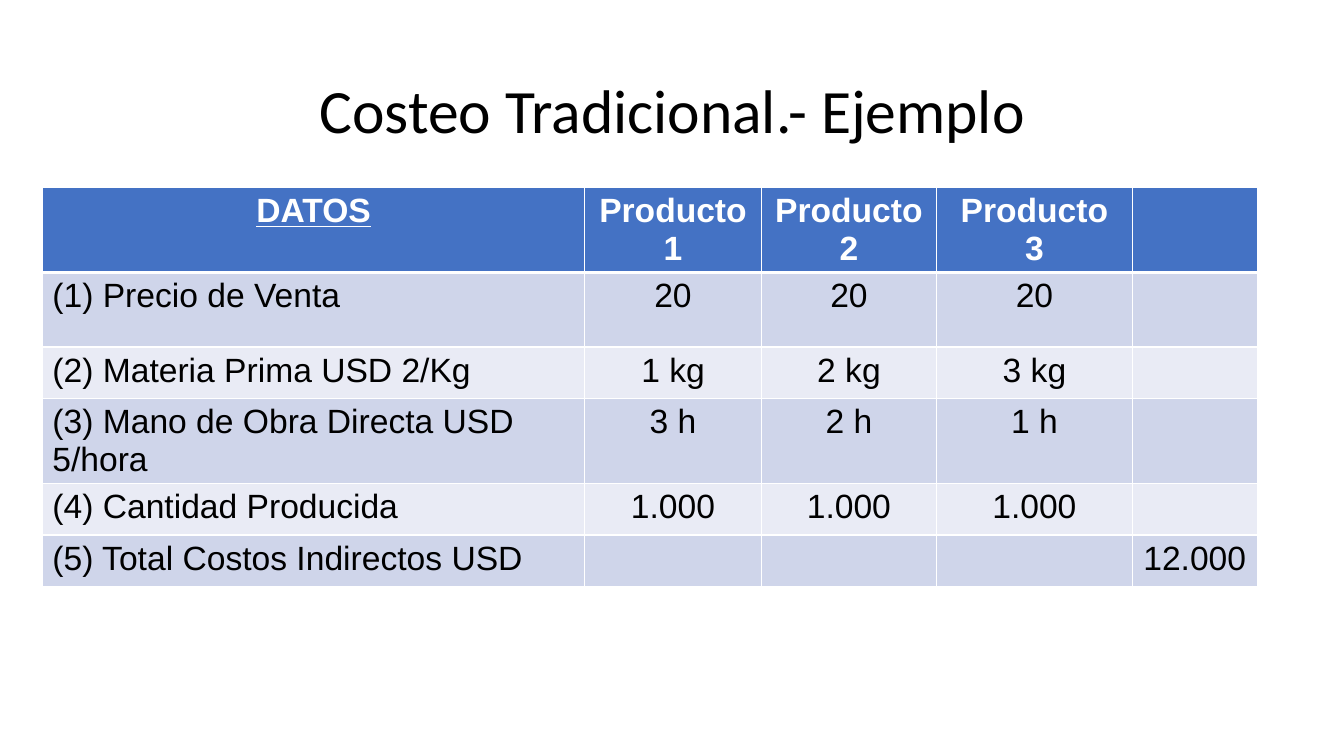
from lxml import etree
from pptx import Presentation
from pptx.dml.color import RGBColor
from pptx.enum.text import MSO_ANCHOR, PP_ALIGN
from pptx.oxml.ns import qn
from pptx.util import Inches, Pt

CENTER, LEFT = PP_ALIGN.CENTER, PP_ALIGN.LEFT
MIDDLE = MSO_ANCHOR.MIDDLE

# Content
TITLE = "Costeo Tradicional.- Ejemplo"
COST_ROWS = [
    ("DATOS", "Producto 1", "Producto 2", "Producto 3", ""),
    ("(1) Precio de Venta", "20", "20", "20", ""),
    ("(2) Materia Prima USD 2/Kg", "1 kg", "2 kg", "3 kg", ""),
    ("(3) Mano de Obra Directa USD 5/hora", "3 h", "2 h", "1 h", ""),
    ("(4) Cantidad Producida", "1.000", "1.000", "1.000", ""),
    ("(5) Total Costos Indirectos USD", "", "", "", "12.000"),
]
COLUMN_WIDTHS = [5.38, 1.75, 1.74, 1.94, 1.24]
ROW_HEIGHTS = [0.84, 0.74, 0.51, 0.84, 0.51, 0.51]
COLORS = {
    "text": "000000",
    "white": "FFFFFF",
    "header": "4472C4",
    "odd": "CFD5EA",
    "even": "E9EBF5",
}
TITLE_FONT = {"name": "Calibri", "size": Pt(44)}
CELL_FONT = {"name": "Arial", "size": Pt(24)}


def format_font(font, values, color):
    for name, value in values.items():
        setattr(font, name, value)
    font.color.rgb = RGBColor.from_string(COLORS[color])


def set_borders(cell, widths):
    properties = cell._tc.get_or_add_tcPr()
    for side, width in widths.items():
        line = etree.SubElement(properties, qn(f"a:ln{side}"), w=str(Pt(width)))
        fill = etree.SubElement(line, qn("a:solidFill"))
        etree.SubElement(fill, qn("a:srgbClr"), val=COLORS["white"])


presentation = Presentation()
presentation.slide_width = Inches(13.33)
presentation.slide_height = Inches(7.5)
slide = presentation.slides.add_slide(presentation.slide_layouts[5])

# Title
title = slide.shapes.title
title.left, title.top = Inches(0.92), Inches(0.4)
title.width, title.height = Inches(11.5), Inches(1.45)
title.text_frame.text = TITLE
title.text_frame.vertical_anchor = MIDDLE
paragraph = title.text_frame.paragraphs[0]
paragraph.alignment = CENTER
paragraph.line_spacing = 0.9
format_font(paragraph.runs[0].font, TITLE_FONT, "text")

# Cost table
table = slide.shapes.add_table(
    len(COST_ROWS), len(COLUMN_WIDTHS), Inches(0.42), Inches(1.86),
    Inches(sum(COLUMN_WIDTHS)), Inches(sum(ROW_HEIGHTS)),
).table
for column, width in zip(table.columns, COLUMN_WIDTHS):
    column.width = Inches(width)
for row, height in zip(table.rows, ROW_HEIGHTS):
    row.height = Inches(height)

for row_index, texts in enumerate(COST_ROWS):
    is_header = row_index == 0
    band = "header" if is_header else ("even", "odd")[row_index % 2]
    # The rule under the header is thicker than the grid
    borders = {"L": 1, "R": 1, "T": 3 if row_index == 1 else 1, "B": 3 if is_header else 1}
    for column_index, text in enumerate(texts):
        cell = table.cell(row_index, column_index)
        set_borders(cell, borders)
        cell.fill.solid()
        cell.fill.fore_color.rgb = RGBColor.from_string(COLORS[band])
        if not text:
            continue
        cell.text = text
        paragraph = cell.text_frame.paragraphs[0]
        paragraph.alignment = CENTER if is_header or column_index else LEFT
        style = {**CELL_FONT, "bold": is_header, "underline": is_header and column_index == 0}
        format_font(paragraph.runs[0].font, style, "white" if is_header else "text")

presentation.save("out.pptx")
